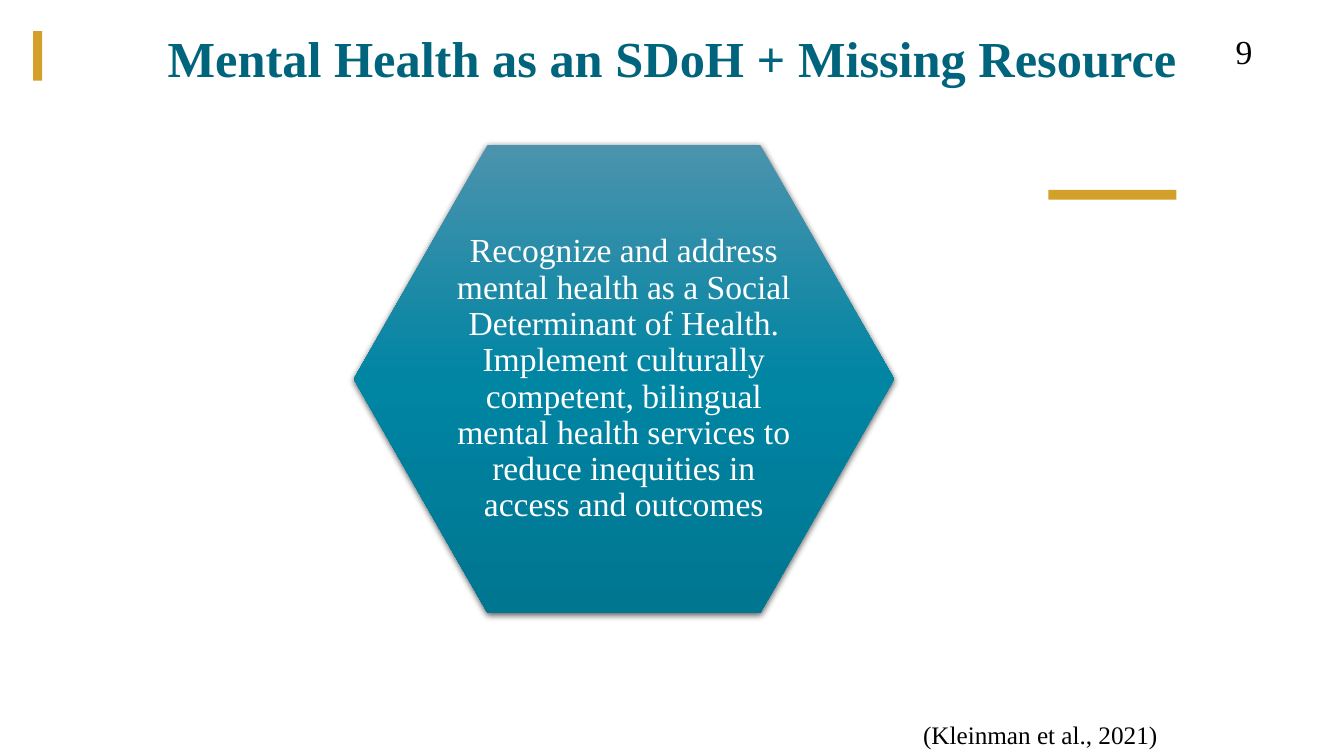
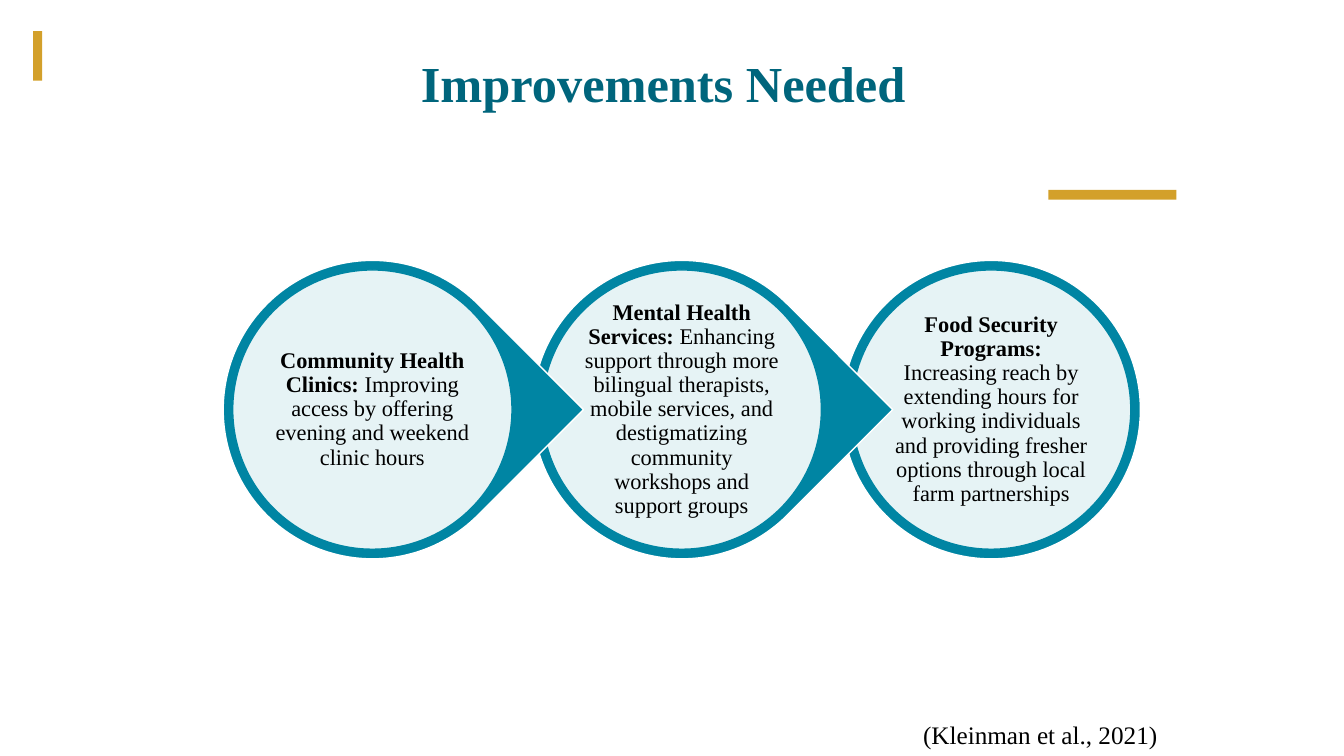
from dataclasses import dataclass

from lxml import etree
from pptx import Presentation
from pptx.dml.color import RGBColor
from pptx.enum import shapes, text
from pptx.oxml import ns
from pptx.util import Pt

FONT = "Times New Roman"
GOLD = RGBColor(0xD3, 0xA0, 0x2A)
TITLE_TEAL = RGBColor(0x00, 0x65, 0x7C)
TEAL = RGBColor(0x00, 0x85, 0xA3)
TEAL_LIGHT = RGBColor(0x4B, 0x93, 0xAD)
TEAL_DARK = RGBColor(0x00, 0x76, 0x91)
WHITE = RGBColor(0xFF, 0xFF, 0xFF)
BLACK = RGBColor(0x00, 0x00, 0x00)

CITATION = "(Kleinman et al., 2021)"
RECOMMENDATION = (
    "Recognize and address mental health as a Social Determinant of Health. "
    "Implement culturally competent, bilingual mental health services to reduce "
    "inequities in access and outcomes"
)


@dataclass(frozen=True)
class Box:
    left: float
    top: float
    width: float
    height: float

    def lengths(self) -> tuple:
        return Pt(self.left), Pt(self.top), Pt(self.width), Pt(self.height)

    def inset(self, margin: float) -> "Box":
        return Box(self.left + margin, self.top + margin,
                   self.width - 2 * margin, self.height - 2 * margin)


@dataclass(frozen=True)
class Improvement:
    heading: str
    detail: str


BANDS = [Box(23.6, 22.2, 6.5, 35.4), Box(748.8, 135.6, 91.6, 7)]
CITATION_BOX = Box(652.3, 510, 213, 29)
FIRST_PIN = Box(159.4, 186, 213.2, 213.2)
PIN_PITCH = 221
RING_WIDTH = 6.85

IMPROVEMENTS = [
    Improvement("Community Health Clinics: ",
                "Improving access by offering evening and weekend clinic hours"),
    Improvement("Mental Health Services: ",
                "Enhancing support through more bilingual therapists, mobile services, "
                "and destigmatizing community workshops and support groups"),
    Improvement("Food Security Programs: ",
                "Increasing reach by extending hours for working individuals and "
                "providing fresher options through local farm partnerships"),
]


def add_xml(parent, tag: str, **attributes):
    return etree.SubElement(parent, ns.qn(tag), attributes)


def style_run(run, size: float, color: RGBColor, bold: bool = False) -> None:
    run.font.name = FONT
    run.font.size = Pt(size)
    run.font.color.rgb = color
    run.font.bold = bold


def add_flat_shape(slide, preset, box: Box, fill: RGBColor, line: RGBColor | None = None):
    shape = slide.shapes.add_shape(preset, *box.lengths())
    shape.shadow.inherit = False
    shape.fill.solid()
    shape.fill.fore_color.rgb = fill
    if line is None:
        shape.line.fill.background()
    else:
        shape.line.color.rgb = line
        shape.line.width = Pt(1)
    return shape


def center_text(shape, margin: float):
    frame = shape.text_frame
    frame.word_wrap = True
    frame.vertical_anchor = text.MSO_ANCHOR.MIDDLE
    frame.margin_left = frame.margin_right = Pt(margin)
    frame.margin_top = frame.margin_bottom = Pt(margin)
    paragraph = frame.paragraphs[0]
    paragraph.alignment = text.PP_ALIGN.CENTER
    paragraph.line_spacing = 0.9
    return paragraph


def add_bands_to_layout(slide) -> None:
    layout = slide.slide_layout
    for placeholder in list(layout.placeholders):
        if placeholder.placeholder_format.type != shapes.PP_PLACEHOLDER.TITLE:
            placeholder.element.getparent().remove(placeholder.element)
    bands = [add_flat_shape(slide, shapes.MSO_SHAPE.RECTANGLE, box, GOLD) for box in BANDS]
    for band in bands:
        layout.shapes.element.append(band.element)


def set_title(slide, wording: str, box: Box) -> None:
    title = slide.shapes.title
    title.left, title.top, title.width, title.height = box.lengths()
    frame = title.text_frame
    frame.text = wording
    frame.auto_size = text.MSO_AUTO_SIZE.NONE
    frame.vertical_anchor = text.MSO_ANCHOR.BOTTOM
    paragraph = frame.paragraphs[0]
    paragraph.alignment = text.PP_ALIGN.CENTER
    paragraph.line_spacing = 0.9
    style_run(paragraph.runs[0], 36, TITLE_TEAL, bold=True)


def add_label(slide, wording: str, box: Box, size: float) -> None:
    frame = slide.shapes.add_textbox(*box.lengths()).text_frame
    frame.word_wrap = True
    frame.text = wording
    style_run(frame.paragraphs[0].runs[0], size, BLACK)


def add_recommendation(slide, box: Box) -> None:
    hexagon = add_flat_shape(slide, shapes.MSO_SHAPE.HEXAGON, box, TEAL)
    hexagon.adjustments[0] = 0.286
    hexagon.adjustments[1] = 1.1547
    hexagon.fill.gradient()
    hexagon.fill.gradient_angle = 270
    stops = hexagon.element.find(".//" + ns.qn("a:gsLst"))
    for stop in list(stops):
        stops.remove(stop)
    for percent, color in ((0, TEAL_LIGHT), (50, TEAL), (100, TEAL_DARK)):
        stop = add_xml(stops, "a:gs", pos=str(percent * 1000))
        add_xml(stop, "a:srgbClr", val=str(color))

    effects = hexagon.element.find(".//" + ns.qn("a:effectLst"))
    shadow = add_xml(effects, "a:outerShdw", blurRad=str(Pt(4.5)), dist=str(Pt(1.5)),
                     dir="5400000", algn="ctr", rotWithShape="0")
    add_xml(add_xml(shadow, "a:srgbClr", val=str(BLACK)), "a:alpha", val="63000")

    hexagon.text_frame.text = RECOMMENDATION
    style_run(center_text(hexagon, 2).runs[0], 24, WHITE)


def add_improvement(slide, improvement: Improvement, position: int, is_last: bool) -> None:
    pin_box = Box(FIRST_PIN.left + position * PIN_PITCH, FIRST_PIN.top,
                  FIRST_PIN.width, FIRST_PIN.height)
    preset = shapes.MSO_SHAPE.OVAL if is_last else shapes.MSO_SHAPE.TEAR
    pin = add_flat_shape(slide, preset, pin_box, TEAL, WHITE)
    if not is_last:
        pin.rotation = 45

    disc = add_flat_shape(slide, shapes.MSO_SHAPE.OVAL, pin_box.inset(RING_WIDTH), WHITE, TEAL)
    disc_color = disc.element.spPr.find(ns.qn("a:solidFill"))[0]
    add_xml(disc_color, "a:alpha", val="90000")
    paragraph = center_text(disc, 0.5)
    for wording, bold in ((improvement.heading, True), (improvement.detail, False)):
        run = paragraph.add_run()
        run.text = wording
        style_run(run, 16, BLACK, bold)


def main() -> None:
    deck = Presentation()
    deck.slide_width, deck.slide_height = Pt(960), Pt(540)
    title_only = deck.slide_layouts[5]

    resource = deck.slides.add_slide(title_only)
    add_bands_to_layout(resource)
    set_title(resource, "Mental Health as an SDoH + Missing Resource", Box(41, 0, 878.4, 67))
    add_recommendation(resource, Box(252.7, 103.7, 385.9, 334.1))
    add_label(resource, "9", Box(875.5, 18.7, 60, 36), 24)
    add_label(resource, CITATION, CITATION_BOX, 18)

    needed = deck.slides.add_slide(title_only)
    set_title(needed, "Improvements Needed", Box(34.5, 17.3, 878.4, 67))
    last = len(IMPROVEMENTS) - 1
    for position, improvement in reversed(list(enumerate(IMPROVEMENTS))):
        add_improvement(needed, improvement, position, position == last)
    add_label(needed, CITATION, CITATION_BOX, 18)

    deck.save("out.pptx")


if __name__ == "__main__":
    main()
